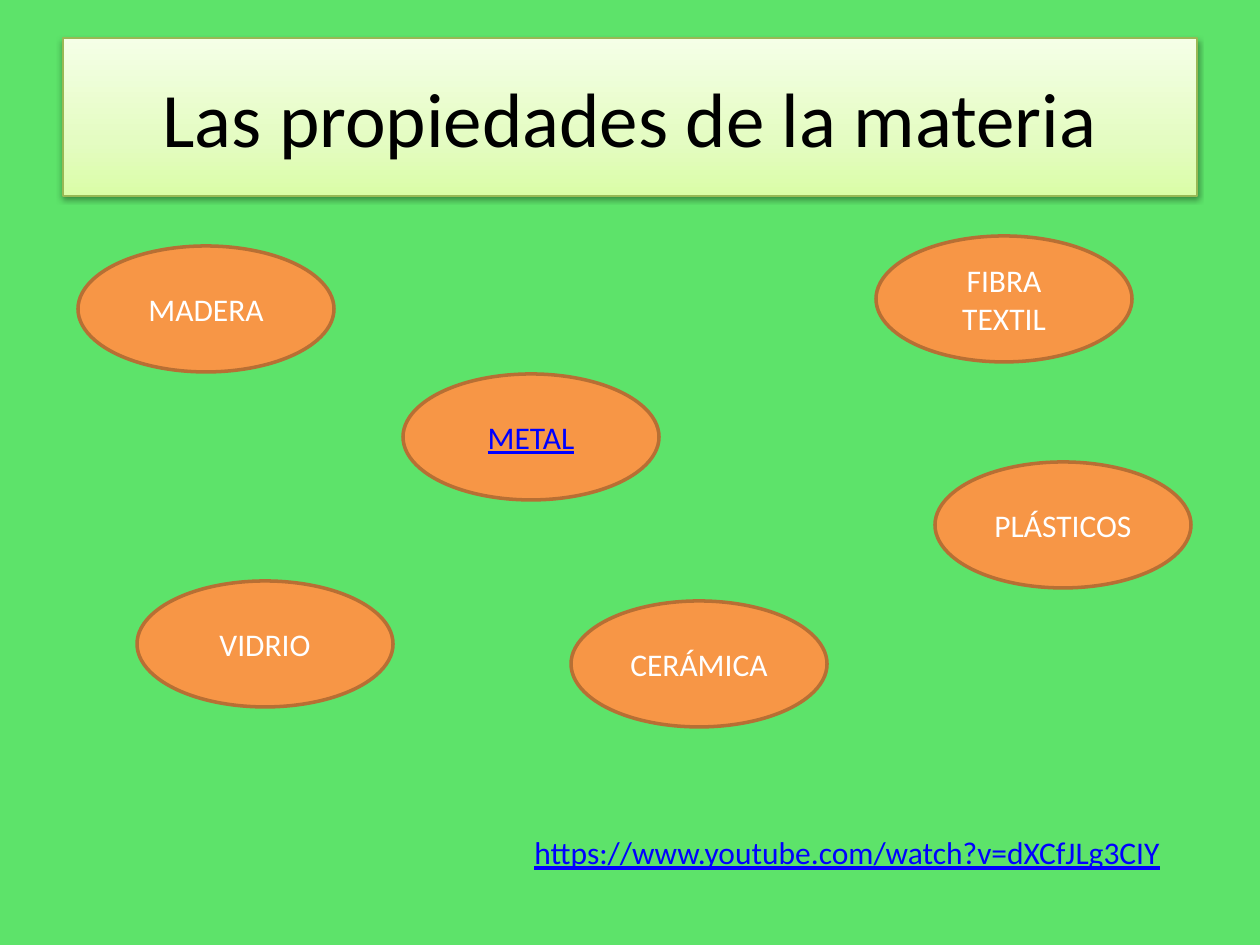
from lxml.etree import fromstring
from pptx import Presentation
from pptx.dml.color import RGBColor
from pptx.enum.shapes import MSO_SHAPE
from pptx.enum.text import MSO_ANCHOR as Anchor, MSO_AUTO_SIZE as AutoSize, PP_ALIGN as Align
from pptx.util import Emu, Pt

TITLE = ("Las propiedades de la materia", (63, 38, 1134, 158))
LINK = ("https://www.youtube.com/watch?v=dXCfJLg3CIY", (522, 827, 689, 50))
OVAL_SIZE = (256, 126)
MATERIALS = [
    ("MADERA", 78, 246, "light"),
    ("VIDRIO", 137, 581, "light"),
    ("METAL", 403, 374, "link"),
    ("PLÁSTICOS", 935, 462, "light"),
    ("CERÁMICA", 571, 601, "light"),
    ("FIBRA TEXTIL", 876, 236, "light"),
]
THEME = {
    "font": "Calibri", "title_pt": 44, "body_pt": 18,
    "background": "5DE36A", "dark": "000000", "light": "FFFFFF", "link": "0000FF",
    "oval": "F79646", "oval_line": "B76F34", "title_line": "98B955",
    "title_stops": [(0, "DAFDA7"), (35, "E4FCC2"), (100, "F5FFE7")],
}
NS = 'xmlns:a="http://schemas.openxmlformats.org/drawingml/2006/main"'
SHADOW = (
    f'<a:effectLst {NS}><a:outerShdw blurRad="{Pt(3.1)}" dist="{Pt(1.6)}" dir="5400000" '
    'rotWithShape="0"><a:srgbClr val="000000"><a:alpha val="38000"/></a:srgbClr>'
    '</a:outerShdw></a:effectLst>'
)


def px(*values):
    return [Emu(round(v * 914400 / 126)) for v in values]


def color(name):
    return RGBColor.from_string(THEME[name])


def write(shape, text, size, ink, align):
    tf = shape.text_frame
    tf.word_wrap = True
    p = tf.paragraphs[0]
    p.alignment = align
    r = p.add_run()
    r.text = text
    r.font.name = THEME["font"]
    r.font.size = Pt(THEME[size])
    r.font.color.rgb = color(ink)
    if ink == "link":
        r.font.underline = True
    return tf


def outline(shape, ink, width):
    shape.line.color.rgb = color(ink)
    shape.line.width = Pt(width)


def add_title(s):
    text, box = TITLE
    sp = s.shapes.title
    sp.left, sp.top, sp.width, sp.height = px(*box)
    stops = "".join(
        f'<a:gs pos="{pos * 1000}"><a:srgbClr val="{rgb}"/></a:gs>'
        for pos, rgb in THEME["title_stops"]
    )
    sp_pr = sp.element.spPr
    sp_pr.append(fromstring(
        f'<a:gradFill {NS} rotWithShape="1"><a:gsLst>{stops}</a:gsLst>'
        '<a:lin ang="16200000" scaled="0"/></a:gradFill>'
    ))
    outline(sp, "title_line", 0.75)
    sp_pr.append(fromstring(SHADOW))
    write(sp, text, "title_pt", "dark", Align.CENTER).vertical_anchor = Anchor.MIDDLE


def add_link(s):
    text, box = LINK
    sp = s.shapes.add_textbox(*px(*box))
    write(sp, text, "body_pt", "link", Align.LEFT).auto_size = AutoSize.SHAPE_TO_FIT_TEXT


def add_material(s, text, left, top, ink):
    sp = s.shapes.add_shape(MSO_SHAPE.OVAL, *px(left, top, *OVAL_SIZE))
    sp.shadow.inherit = False
    sp.fill.solid()
    sp.fill.fore_color.rgb = color("oval")
    outline(sp, "oval_line", 2)
    write(sp, text, "body_pt", ink, Align.CENTER).vertical_anchor = Anchor.MIDDLE


def main():
    prs = Presentation()
    prs.slide_width, prs.slide_height = px(1260, 945)
    s = prs.slides.add_slide(prs.slide_layouts[5])
    s.background.fill.solid()
    s.background.fill.fore_color.rgb = color("background")
    add_title(s)
    add_link(s)
    for material in MATERIALS:
        add_material(s, *material)
    prs.save("out.pptx")


if __name__ == "__main__":
    main()
